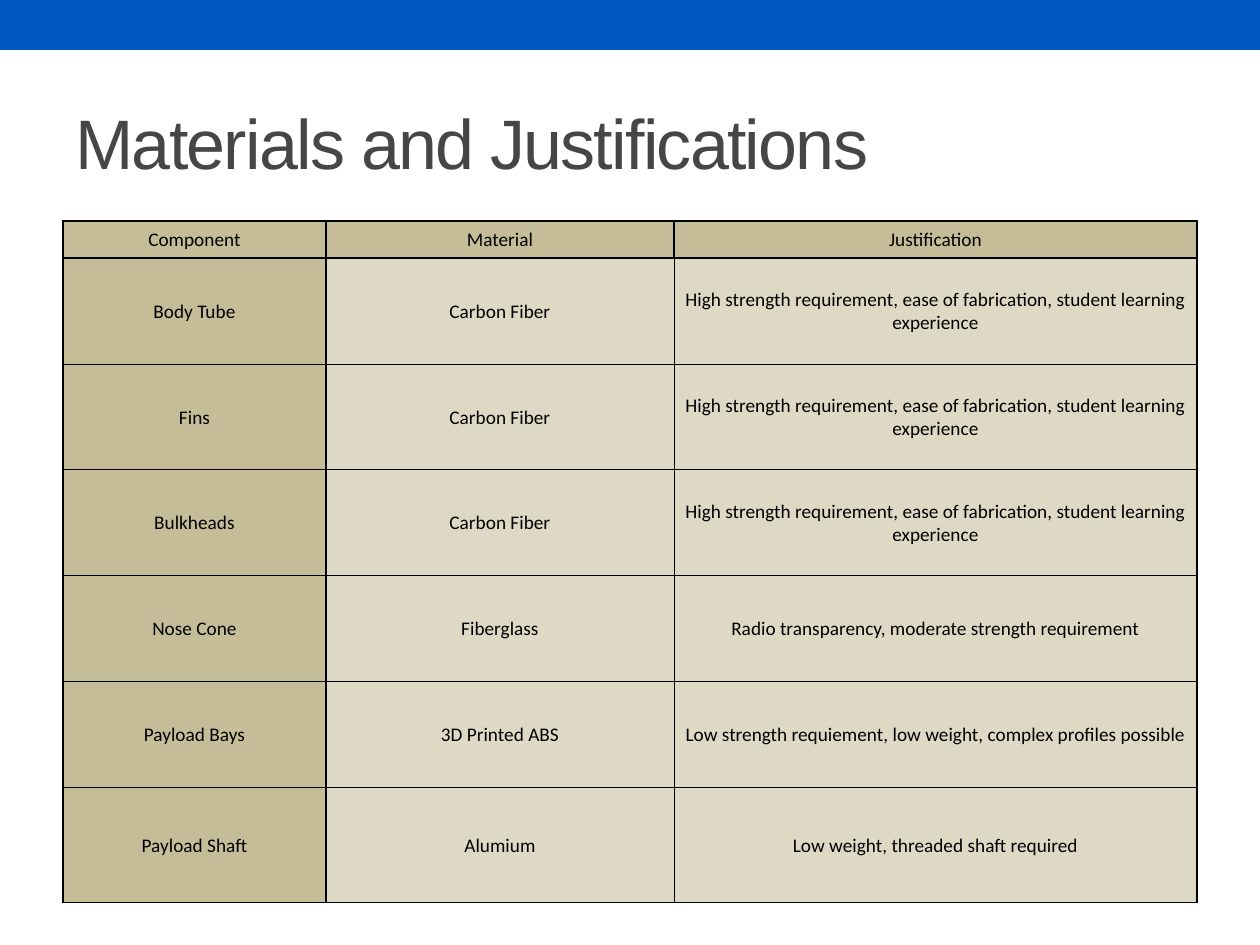
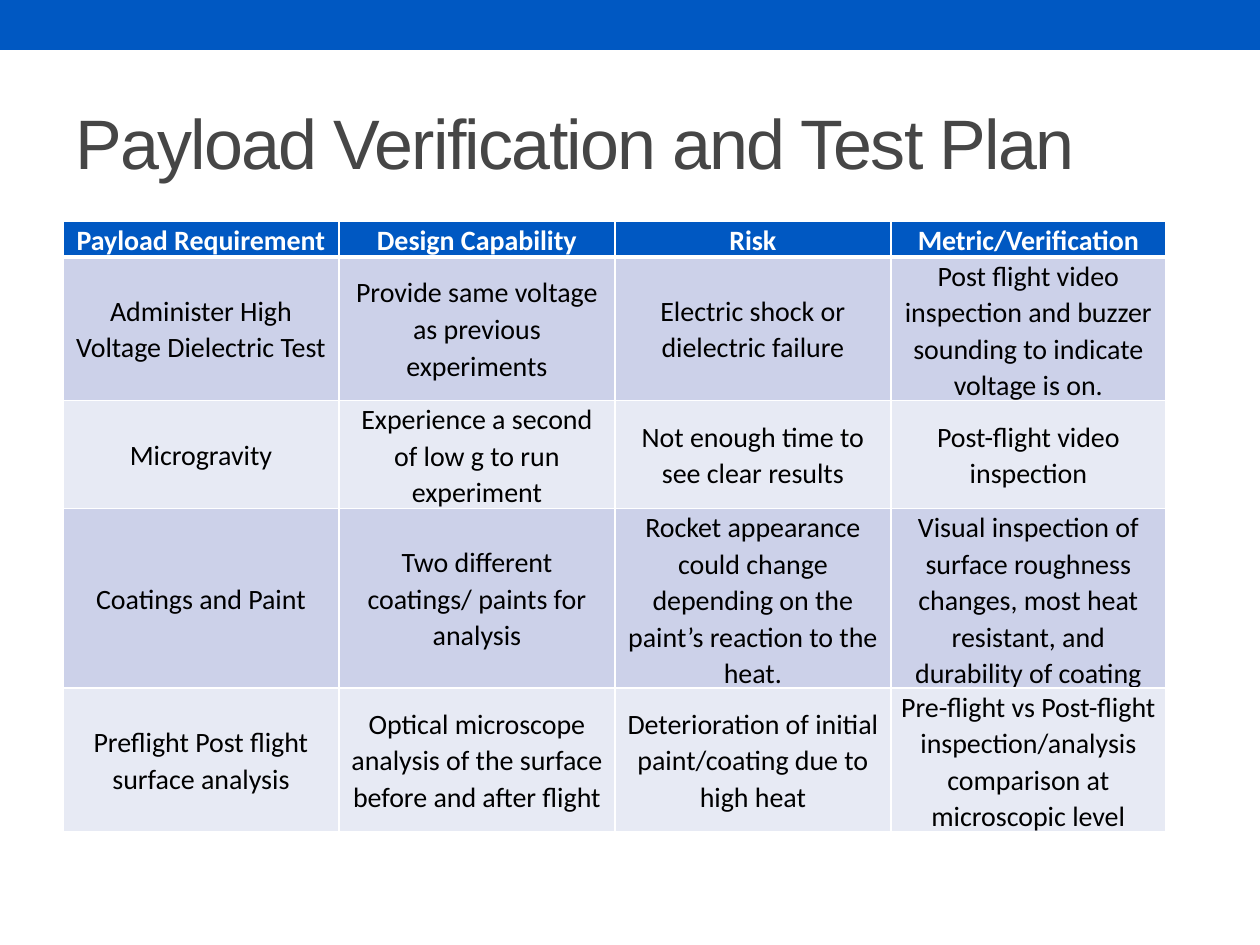
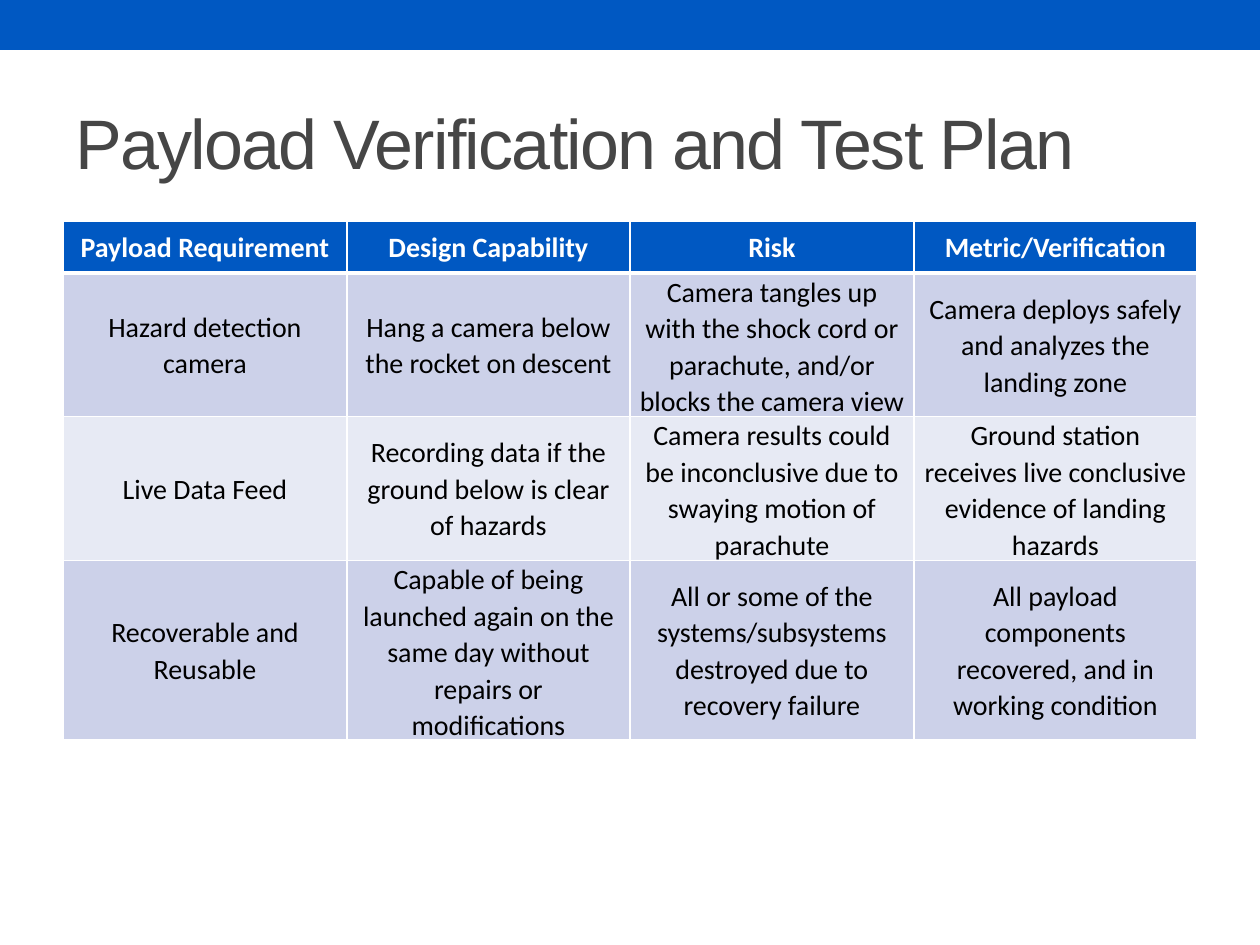
import lxml.etree
import pptx
import pptx.dml.color
import pptx.enum.shapes
import pptx.enum.text
import pptx.oxml.ns
import pptx.util

PX = 914400 / 126
BLUE, WHITE, BLACK, TITLE_GREY = "0058C2", "FFFFFF", "000000", "464646"
TAN, SAND = "C4BD97", "DDD9C4"
BAND_DARK, BAND_LIGHT = "CCD1E9", "E7EAF4"


def px(length):
    return pptx.util.Emu(round(length * PX))


def color(value):
    return pptx.dml.color.RGBColor.from_string(value)


fabrication = "High strength requirement, ease of fabrication, student learning experience"
plan_title = "Payload Verification and Test Plan"
plan_header = ["Payload Requirement", "Design Capability", "Risk", "Metric/Verification"]
materials_style = {
    "size": 11, "spacing": 1, "side": 1, "top": 1, "line": BLACK,
    "header_text": BLACK, "header_fill": TAN, "first_column_fill": TAN,
    "bands": [SAND, SAND], "verticals": [1, 1, 0.5, 1],
}
plan_style = {
    "size": 16, "spacing": 1.07, "side": 9, "top": 0, "line": WHITE,
    "header_text": WHITE, "header_fill": BLUE, "first_column_fill": None,
    "bands": [BAND_DARK, BAND_LIGHT], "verticals": [1] * 5,
}

slides = [
    {
        "title": "Materials and Justifications",
        "style": materials_style,
        "columns": [263, 348, 523],
        "heights": [37] + [106] * 5 + [115],
        "horizontals": [1, 1] + [0.5] * 5 + [1],
        "rows": [
            ["Component", "Material", "Justification"],
            ["Body Tube", "Carbon Fiber", fabrication],
            ["Fins", "Carbon Fiber", fabrication],
            ["Bulkheads", "Carbon Fiber", fabrication],
            ["Nose Cone", "Fiberglass", "Radio transparency, moderate strength requirement"],
            ["Payload Bays", "3D Printed ABS",
             "Low strength requiement, low weight, complex profiles possible"],
            ["Payload Shaft", "Alumium", "Low weight, threaded shaft required"],
        ],
    },
    {
        "title": plan_title,
        "style": plan_style,
        "columns": [276, 276, 276, 275],
        "heights": [33, 134, 100, 166, 134],
        "horizontals": [1, 3, 1, 1, 1, 1],
        "rows": [
            plan_header,
            ["Administer High Voltage Dielectric Test",
             "Provide same voltage as previous experiments",
             "Electric shock or dielectric failure",
             "Post flight video inspection and buzzer sounding to indicate voltage is on."],
            ["Microgravity",
             "Experience a second of low g to run experiment",
             "Not enough time to see clear results",
             "Post-flight video inspection"],
            ["Coatings and Paint",
             "Two different coatings/ paints for analysis",
             "Rocket appearance could change depending on the paint’s reaction to the heat.",
             "Visual inspection of surface roughness changes, most heat resistant, "
             "and durability of coating"],
            ["Preflight Post flight surface analysis",
             "Optical microscope analysis of the surface before and after flight",
             "Deterioration of initial paint/coating due to high heat",
             "Pre-flight vs Post-flight inspection/analysis comparison at microscopic level"],
        ],
    },
    {
        "title": plan_title,
        "style": plan_style,
        "columns": [284, 283, 284, 283],
        "heights": [52] * 4,
        "horizontals": [1, 3, 1, 1, 1],
        "rows": [
            plan_header,
            ["Hazard detection camera",
             "Hang a camera below the rocket on descent",
             "Camera tangles up with the shock cord or parachute, and/or blocks the camera view",
             "Camera deploys safely and analyzes the landing zone"],
            ["Live Data Feed",
             "Recording data if the ground below is clear of hazards",
             "Camera results could be inconclusive due to swaying motion of parachute",
             "Ground station receives live conclusive evidence of landing hazards"],
            ["Recoverable and Reusable",
             "Capable of being launched again on the same day without repairs or modifications",
             "All or some of the systems/subsystems destroyed due to recovery failure",
             "All payload components recovered, and in working condition"],
        ],
    },
]

presentation = pptx.Presentation()
presentation.slide_width = px(1260)
presentation.slide_height = px(945)

for content in slides:
    slide = presentation.slides.add_slide(presentation.slide_layouts[6])
    style = content["style"]

    band = slide.shapes.add_shape(
        pptx.enum.shapes.MSO_SHAPE.RECTANGLE, px(0), px(0), px(1260), px(50))
    band.shadow.inherit = False
    band.fill.solid()
    band.fill.fore_color.rgb = color(BLUE)
    band.line.fill.background()

    title = slide.shapes.add_textbox(px(63), px(73), px(1134), px(136))
    title.text_frame.word_wrap = True
    title.text_frame.vertical_anchor = pptx.enum.text.MSO_ANCHOR.MIDDLE
    run = title.text_frame.paragraphs[0].add_run()
    run.text = content["title"]
    run.font.name = "Arial"
    run.font.size = pptx.util.Pt(40)
    run.font.color.rgb = color(TITLE_GREY)
    run._r.get_or_add_rPr().set("spc", "-100")

    rows, columns, heights = content["rows"], content["columns"], content["heights"]
    table = slide.shapes.add_table(
        len(rows), len(columns), px(63), px(221), px(sum(columns)), px(sum(heights))).table
    table.first_row = False
    table.horz_banding = False
    for column, width in zip(table.columns, columns):
        column.width = px(width)

    for row_index, texts in enumerate(rows):
        table.rows[row_index].height = px(heights[row_index])
        is_header = row_index == 0
        verticals = [1] * (len(columns) + 1) if is_header else style["verticals"]
        for column_index, text in enumerate(texts):
            cell = table.cell(row_index, column_index)
            cell.margin_left = cell.margin_right = px(style["side"])
            cell.margin_top = px(style["top"])
            cell.margin_bottom = px(0)
            cell.vertical_anchor = pptx.enum.text.MSO_ANCHOR.MIDDLE

            borders = {
                "a:lnL": verticals[column_index],
                "a:lnR": verticals[column_index + 1],
                "a:lnT": content["horizontals"][row_index],
                "a:lnB": content["horizontals"][row_index + 1],
            }
            properties = cell._tc.get_or_add_tcPr()
            for tag, width in borders.items():
                border = lxml.etree.SubElement(
                    properties, pptx.oxml.ns.qn(tag), w=str(pptx.util.Pt(width)))
                solid = lxml.etree.SubElement(border, pptx.oxml.ns.qn("a:solidFill"))
                lxml.etree.SubElement(solid, pptx.oxml.ns.qn("a:srgbClr"), val=style["line"])

            fill = style["bands"][(row_index - 1) % 2]
            if column_index == 0 and style["first_column_fill"]:
                fill = style["first_column_fill"]
            if is_header:
                fill = style["header_fill"]
            cell.fill.solid()
            cell.fill.fore_color.rgb = color(fill)

            paragraph = cell.text_frame.paragraphs[0]
            paragraph.alignment = pptx.enum.text.PP_ALIGN.CENTER
            paragraph.line_spacing = style["spacing"]
            run = paragraph.add_run()
            run.text = text
            run.font.name = "Calibri"
            run.font.size = pptx.util.Pt(style["size"])
            run.font.bold = is_header and style is plan_style
            run.font.color.rgb = color(style["header_text"] if is_header else BLACK)

presentation.save("out.pptx")
